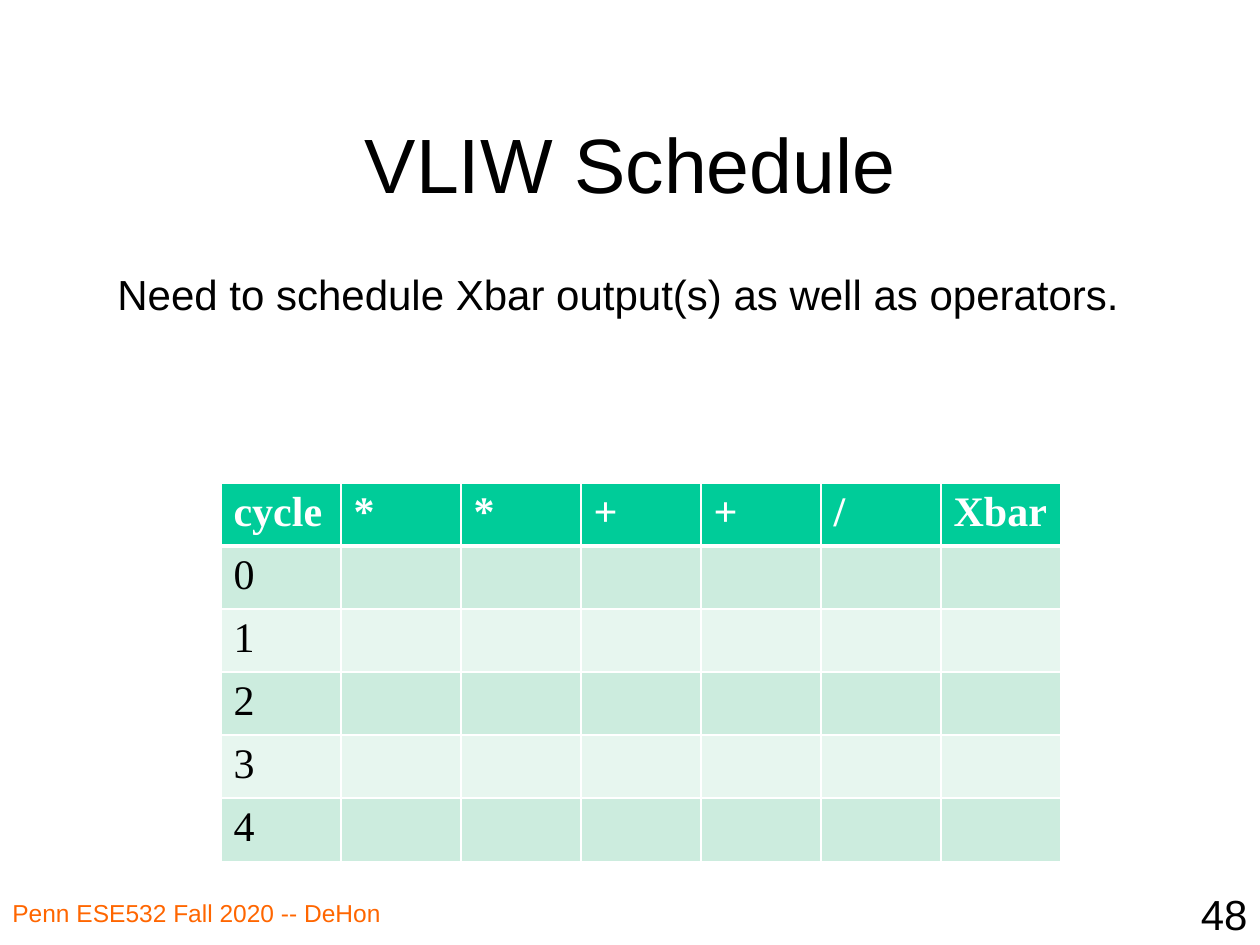
"""Build the VLIW schedule slide."""
from lxml import etree
from pptx import Presentation
from pptx.dml.color import RGBColor
from pptx.enum.text import MSO_ANCHOR, PP_ALIGN
from pptx.oxml.ns import qn
from pptx.util import Emu, Pt

LEFT, MID, RIGHT = PP_ALIGN.LEFT, PP_ALIGN.CENTER, PP_ALIGN.RIGHT
TOP, CORE = MSO_ANCHOR.TOP, MSO_ANCHOR.MIDDLE
PX = 914400 // 126

HUE = {"ink": "000000", "note": "FF6600", "white": "FFFFFF",
       "head": "00CC99", "odd": "CCECDE", "even": "E7F6EF"}

TEXTS = [
    ("VLIW Schedule", (95, 84, 1071, 158), 44, "ink", MID, CORE, True),
    ("Penn ESE532 Fall 2020 -- DeHon", (0, 892, 483, 53), 14, "note", LEFT, TOP, True),
    ("48", (998, 882, 262, 63), 24, "ink", RIGHT, TOP, True),
    ("Need to schedule Xbar output(s) as well as operators.",
     (105, 262, 1037, 115), 24, "ink", LEFT, TOP, False),
]

HEADS = ["cycle", "*", "*", "+", "+", "/", "Xbar"]
CYCLES = 5
GRID = (221, 483)
COL, ROW = 120, 63


def px(n):
    return Emu(n * PX)


def rgb(name):
    return RGBColor.from_string(HUE[name])


def style(font, hue, **form):
    for key, val in form.items():
        setattr(font, key, val)
    font.color.rgb = rgb(hue)


def add_text(slide, text, box, size, hue, align, anchor, wrap):
    frame = slide.shapes.add_textbox(*map(px, box)).text_frame
    frame.word_wrap = wrap
    frame.vertical_anchor = anchor
    para = frame.paragraphs[0]
    para.alignment = align
    run = para.add_run()
    run.text = text
    style(run.font, hue, name="Arial", size=Pt(size))


def add_edges(cell, widths):
    props = cell._tc.get_or_add_tcPr()
    for spot, (side, width) in enumerate(widths.items()):
        line = etree.Element(qn("a:" + side), w=str(Pt(width)))
        fill = etree.SubElement(line, qn("a:solidFill"))
        etree.SubElement(fill, qn("a:srgbClr"), val=HUE["white"])
        props.insert(spot, line)


def add_grid(slide):
    rows = [HEADS] + [[str(n)] + [""] * (len(HEADS) - 1) for n in range(CYCLES)]
    size = (COL * len(HEADS), ROW * len(rows))
    table = slide.shapes.add_table(len(rows), len(HEADS), *map(px, GRID + size)).table
    for col in table.columns:
        col.width = px(COL)
    for r, row in enumerate(rows):
        table.rows[r].height = px(ROW)
        head = r == 0
        band = "head" if head else "odd" if r % 2 else "even"
        edges = {"lnL": 1, "lnR": 1, "lnT": 3 if r == 1 else 1, "lnB": 3 if head else 1}
        for c, text in enumerate(row):
            cell = table.cell(r, c)
            cell.fill.solid()
            cell.fill.fore_color.rgb = rgb(band)
            add_edges(cell, edges)
            para = cell.text_frame.paragraphs[0]
            part = para
            if text:
                part = para.add_run()
                part.text = text
            style(part.font, "white" if head else "ink",
                  name="Times New Roman", size=Pt(24), bold=head)


def main():
    deck = Presentation()
    deck.slide_width, deck.slide_height = px(1260), px(945)
    slide = deck.slides.add_slide(deck.slide_layouts[6])
    for item in TEXTS:
        add_text(slide, *item)
    add_grid(slide)
    deck.save("out.pptx")


if __name__ == "__main__":
    main()
